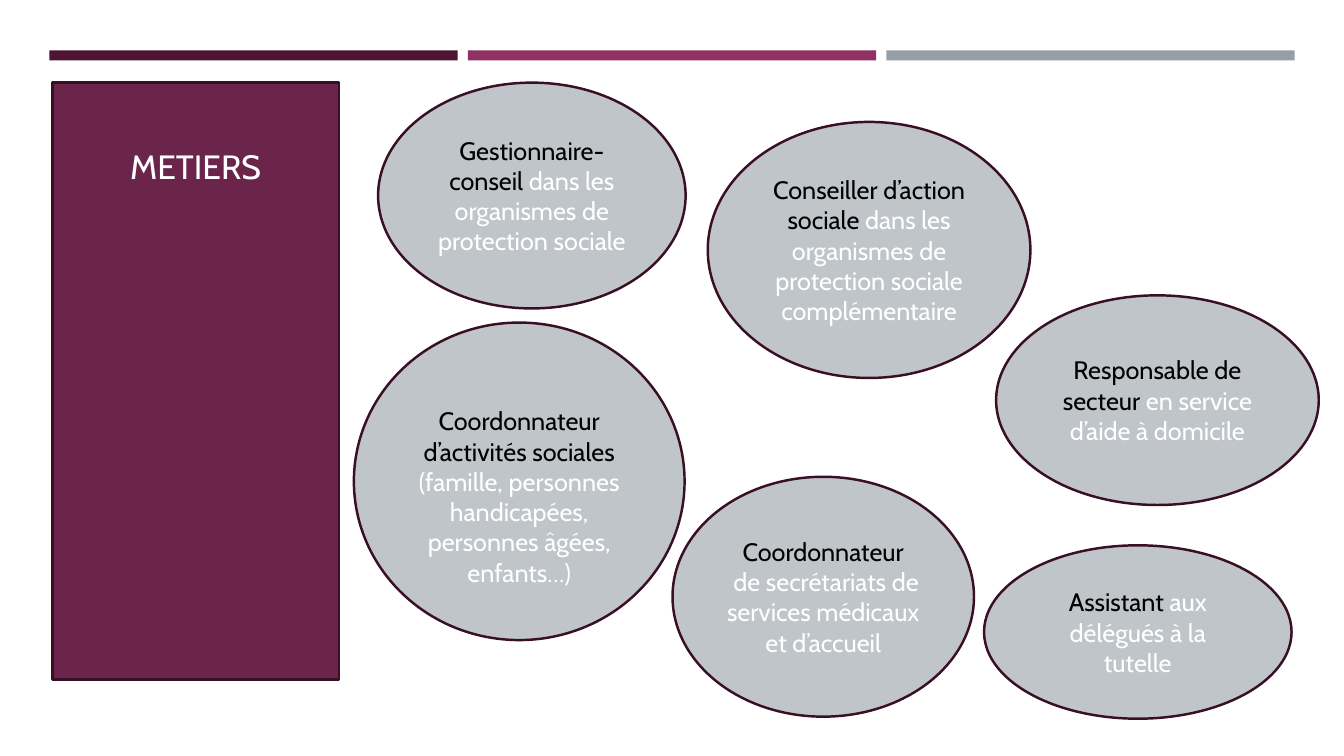
from pptx import Presentation
from pptx.dml.color import RGBColor
from pptx.enum.shapes import MSO_SHAPE as Shape
from pptx.enum.text import MSO_ANCHOR as Anchor, MSO_AUTO_SIZE as AutoSize, PP_ALIGN as Align
from pptx.util import Inches, Pt

PLUM = RGBColor(0x4D, 0x14, 0x34)
MAGENTA = RGBColor(0x90, 0x31, 0x63)
SLATE = RGBColor(0x96, 0x9F, 0xA7)
PANEL = RGBColor(0x6C, 0x25, 0x4A)
BUBBLE = RGBColor(0xC0, 0xC5, 0xCA)
OUTLINE = RGBColor(0x39, 0x0F, 0x26)
BLACK = RGBColor(0, 0, 0)
WHITE = RGBColor(0xFF, 0xFF, 0xFF)

BAR_LEFT, BAR_TOP, BAR_WIDTH, BAR_HEIGHT, BAR_STEP = 0.49, 0.5, 4.05, 0.1, 4.15

# Left, top, width, height, extra top inset, then paragraphs of (job, details)
JOBS = [
    (3.75, 0.82, 3.05, 2.24, 0,
     [("Gestionnaire- conseil", " dans les organismes de protection sociale")]),
    (7.02, 1.21, 3.2, 2.54, 0,
     [("Conseiller d’action sociale ",
       "dans les organismes de protection sociale complémentaire")]),
    (9.88, 2.93, 3.2, 2.08, 0,
     [("Responsable de secteur ", "en service d’aide à domicile")]),
    (3.51, 3.2, 3.28, 3.15, 0.3,
     [("Coordonnateur d’activités sociales ",
       "(famille, personnes handicapées, personnes âgées, enfants…)")]),
    (6.67, 4.73, 2.99, 2.38, 0,
     [("Coordonnateur", ""),
      ("", " de secrétariats de services médicaux et d’accueil")]),
    (9.76, 5.41, 3.05, 1.72, 0,
     [("Assistant", " aux délégués à la tutelle")]),
]


def add_span(para, text, *, size=18, color=WHITE, font="Cabin"):
    span = para.add_run()
    span.text = text
    span.font.name = font
    span.font.size = Pt(size)
    span.font.color.rgb = color


class JobsSlide:
    def __init__(self, deck):
        self.slide = deck.slides.add_slide(deck.slide_layouts[5])

    def paint(self, box, fill, outlined=True):
        box.fill.solid()
        box.fill.fore_color.rgb = fill
        if outlined:
            box.line.color.rgb = OUTLINE
            box.line.width = Pt(1.75)
        else:
            box.line.fill.background()

    def frame(self, box, anchor, top_inset):
        """Set wrapping, anchor and insets of a box and return its text frame."""
        frame = box.text_frame
        frame.word_wrap = True
        frame.auto_size = AutoSize.NONE
        frame.vertical_anchor = anchor
        frame.margin_left = frame.margin_right = Inches(0.1)
        frame.margin_top, frame.margin_bottom = Inches(top_inset), Inches(0.05)
        return frame

    def shape(self, kind, left, top, width, height):
        box = self.slide.shapes.add_shape(
            kind, Inches(left), Inches(top), Inches(width), Inches(height))
        box.shadow.inherit = False
        return box

    def bar(self, left, color):
        box = self.shape(Shape.RECTANGLE, left, BAR_TOP, BAR_WIDTH, BAR_HEIGHT)
        self.paint(box, color, outlined=False)

    def title(self, text):
        box = self.slide.shapes.title
        box.left, box.top = Inches(0.52), Inches(0.82)
        box.width, box.height = Inches(2.84), Inches(5.92)
        self.paint(box, PANEL)
        para = self.frame(box, Anchor.TOP, 0.63).paragraphs[0]
        para.alignment = Align.CENTER
        add_span(para, text, size=24)

    def bubble(self, left, top, width, height, extra_inset, paragraphs):
        box = self.shape(Shape.OVAL, left, top, width, height)
        self.paint(box, BUBBLE)
        frame = self.frame(box, Anchor.MIDDLE, 0.05 + extra_inset)
        for index, (job, details) in enumerate(paragraphs):
            para = frame.add_paragraph() if index else frame.paragraphs[0]
            para.alignment = Align.CENTER
            for text, color in ((job, BLACK), (details, WHITE)):
                if text:
                    add_span(para, text, color=color)


def main():
    deck = Presentation()
    deck.slide_width, deck.slide_height = Inches(13.33), Inches(7.5)
    page = JobsSlide(deck)
    for index, color in enumerate((PLUM, MAGENTA, SLATE)):
        page.bar(BAR_LEFT + index * BAR_STEP, color)
    page.title("METIERS")
    for job in JOBS:
        page.bubble(*job)
    deck.save("out.pptx")


if __name__ == "__main__":
    main()
